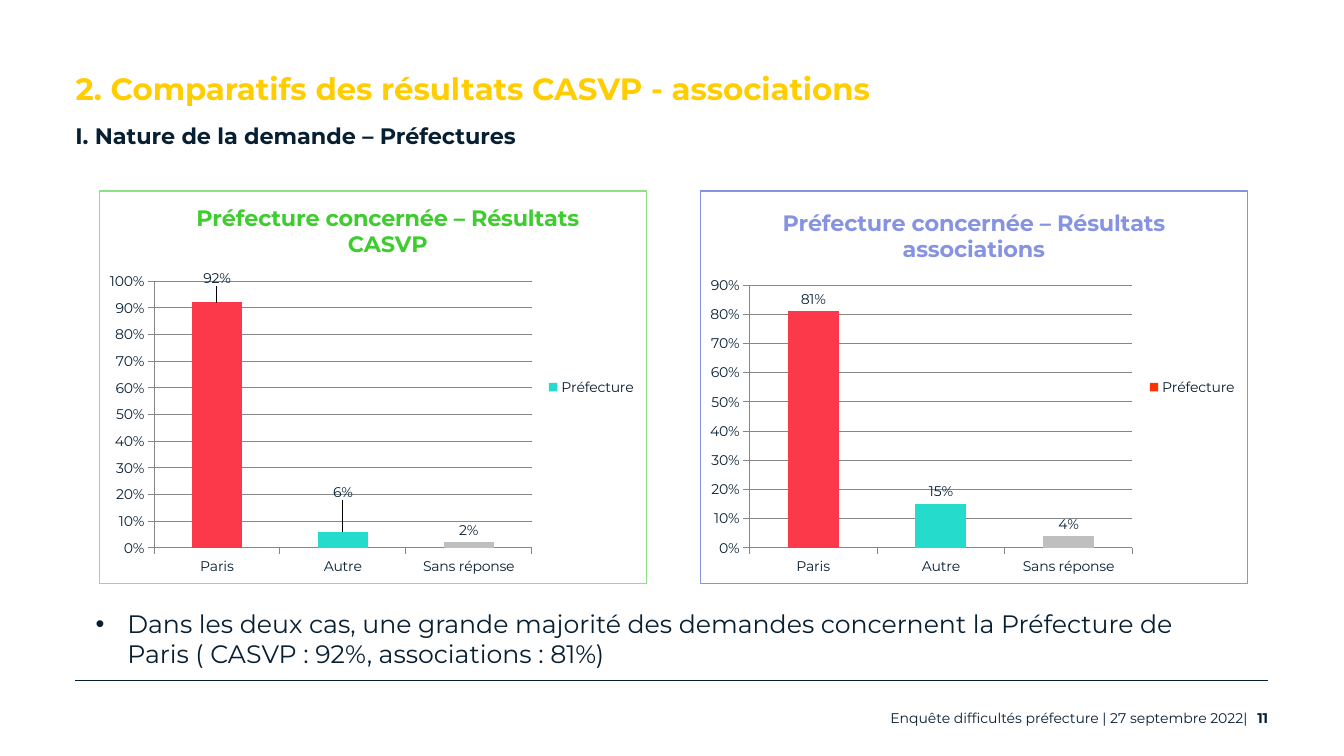
from dataclasses import dataclass

from lxml import etree
from pptx import Presentation
from pptx.chart.data import CategoryChartData
from pptx.dml.color import RGBColor
from pptx.enum.chart import XL_CHART_TYPE, XL_LABEL_POSITION, XL_LEGEND_POSITION, XL_TICK_MARK
from pptx.enum.shapes import MSO_CONNECTOR
from pptx.enum.text import MSO_ANCHOR, PP_ALIGN
from pptx.oxml import parse_xml
from pptx.oxml.ns import nsdecls, qn
from pptx.util import Cm, Pt

COLUMNS = XL_CHART_TYPE.COLUMN_CLUSTERED
OUTSIDE_END = XL_LABEL_POSITION.OUTSIDE_END
LEGEND_RIGHT = XL_LEGEND_POSITION.RIGHT
TICK_OUT = XL_TICK_MARK.OUTSIDE
STRAIGHT = MSO_CONNECTOR.STRAIGHT
TOP, MIDDLE, BOTTOM = MSO_ANCHOR.TOP, MSO_ANCHOR.MIDDLE, MSO_ANCHOR.BOTTOM
LEFT, RIGHT = PP_ALIGN.LEFT, PP_ALIGN.RIGHT

FONT = "Montserrat"
NAVY = "071F32"
GRID_GREY = "878787"
BAR_COLOURS = ("FB394A", "25DCCC", "BFBFBF")
CATEGORIES = ("Paris", "Autre", "Sans réponse")


@dataclass
class Label:
    """A text with its place in centimetres and its format."""

    text: str
    left: float
    top: float
    width: float
    height: float
    size: float
    bold: bool = False
    colour: str = NAVY
    anchor: MSO_ANCHOR = MIDDLE
    align: PP_ALIGN = LEFT
    spacing: float = 1.15
    bullet: bool = False


@dataclass
class Survey:
    """A column chart of one group of answers; layouts are chart fractions."""

    title: str
    left: float
    title_colour: str
    border: str
    legend_colour: str
    values: tuple[float, ...]
    plot_layout: dict[str, float]
    title_layout: dict[str, float]
    label_shifts: dict[int, float]
    overlap: int


TITLE = Label("2. Comparatifs des résultats CASVP - associations", 1.65, 1.5, 30, 1.3, 22,
              bold=True, colour="FFCD00", anchor=TOP)
LABELS = (
    Label("I. Nature de la demande – Préfectures", 1.65, 2.84, 30, 1.04, 16,
          bold=True, anchor=BOTTOM, spacing=1.3),
    Label("Enquête difficultés préfecture | 27 septembre 2022|", 14.68, 17.7, 17, 0.71, 10,
          align=RIGHT),
    Label("11", 30.71, 17.7, 1.5, 0.71, 10, bold=True, align=RIGHT),
    Label("Dans les deux cas, une grande majorité des demandes concernent la Préfecture "
          "de Paris ( CASVP : 92%, associations : 81%)", 2.16, 15.21, 29.29, 1.8, 18,
          anchor=TOP, spacing=1, bullet=True),
)
SURVEYS = (
    Survey("Préfecture concernée – Résultats CASVP", 2.49, "3ECD2E", "8AE380", "25DCCC",
           (0.92, 0.06, 0.02), {"x": 0.1, "y": 0.23, "w": 0.69, "h": 0.68},
           {"x": 0.17, "y": 0.02}, {0: -0.03, 1: -0.07}, 0),
    Survey("Préfecture concernée – Résultats associations", 17.63, "8693E2", "8693E2", "FF3300",
           (0.81, 0.15, 0.04), {"x": 0.09, "y": 0.24, "w": 0.7, "h": 0.67}, {}, {}, -79),
)


def rgb(colour: str) -> RGBColor:
    """Turn a hex string into a colour."""
    return RGBColor.from_string(colour)


def style_font(font, size: float, colour: str, bold: bool = False) -> None:
    """Give a font its face, size, colour and weight."""
    font.name = FONT
    font.size = Pt(size)
    font.bold = bold
    font.color.rgb = rgb(colour)


def write_label(box, label: Label) -> None:
    """Place a text shape and fill it with its formatted text."""
    box.left, box.top = Cm(label.left), Cm(label.top)
    box.width, box.height = Cm(label.width), Cm(label.height)
    frame = box.text_frame
    frame.word_wrap = True
    frame.vertical_anchor = label.anchor
    frame.text = label.text
    para = frame.paragraphs[0]
    para.alignment = label.align
    para.line_spacing = label.spacing
    if label.bullet:
        properties = para._p.get_or_add_pPr()
        properties.set("marL", str(Cm(0.8)))
        properties.set("indent", str(Cm(-0.8)))
        etree.SubElement(properties, qn("a:buFont")).set("typeface", "Arial")
        etree.SubElement(properties, qn("a:buChar")).set("char", "•")
    for span in para.runs:
        style_font(span.font, label.size, label.colour, label.bold)


def make_layout(places: dict[str, float], target: str = "", mode: str = "edge"):
    """Build a manual layout element for a chart part."""
    layout = parse_xml(f"<c:layout {nsdecls('c')}><c:manualLayout/></c:layout>")
    manual = layout[0]
    if target:
        etree.SubElement(manual, qn("c:layoutTarget")).set("val", target)
    for axis in ("x", "y"):
        etree.SubElement(manual, qn(f"c:{axis}Mode")).set("val", mode)
    for name, value in places.items():
        etree.SubElement(manual, qn(f"c:{name}")).set("val", str(value))
    return layout


def replace_layout(parent, previous, layout) -> None:
    """Put a layout in a chart part, after the given child or first."""
    for old in parent.findall(qn("c:layout")):
        parent.remove(old)
    if previous is None:
        parent.insert(0, layout)
    else:
        previous.addnext(layout)


def style_axes(chart) -> None:
    """Format both axes and the horizontal grid."""
    for axis in (chart.category_axis, chart.value_axis):
        axis.major_tick_mark = TICK_OUT
        axis.format.line.color.rgb = rgb(GRID_GREY)
        axis.format.line.width = Pt(0.75)
    values = chart.value_axis
    values.minimum_scale = 0
    values.major_unit = 0.1
    values.tick_labels.number_format = "0%"
    values.tick_labels.number_format_is_linked = False
    values.has_major_gridlines = True
    values.major_gridlines.format.line.color.rgb = rgb(GRID_GREY)
    values.major_gridlines.format.line.width = Pt(0.75)


def style_bars(plot, survey: Survey) -> None:
    """Colour the bars and label them."""
    plot.gap_width = 150
    plot.overlap = survey.overlap
    plot.vary_by_categories = False
    series = plot.series[0]
    series.format.fill.solid()
    series.format.fill.fore_color.rgb = rgb(survey.legend_colour)
    for index, colour in enumerate(BAR_COLOURS):
        fill = series.points[index].format.fill
        fill.solid()
        fill.fore_color.rgb = rgb(colour)
    labels = series.data_labels
    labels.show_value = True
    labels.number_format = "0%"
    labels.number_format_is_linked = False
    labels.position = OUTSIDE_END
    for index, shift in survey.label_shifts.items():
        series.points[index].data_label.position = OUTSIDE_END
        element = labels._element.findall(qn("c:dLbl"))[-1]
        replace_layout(element, element.find(qn("c:idx")),
                       make_layout({"x": 0, "y": shift}, mode="factor"))


def add_survey(page, survey: Survey) -> None:
    """Draw one survey chart with its title, legend and border."""
    data = CategoryChartData(number_format="0%")
    data.categories = CATEGORIES
    data.add_series("Préfecture", survey.values)
    chart = page.shapes.add_chart(COLUMNS, Cm(survey.left), Cm(4.8), Cm(13.82), Cm(9.91), data).chart
    style_font(chart.font, 10, NAVY)
    chart.has_title = True
    frame = chart.chart_title.text_frame
    frame.text = survey.title
    style_font(frame.paragraphs[0].runs[0].font, 16, survey.title_colour, True)
    chart.chart_title.include_in_layout = False
    if survey.title_layout:
        heading = chart.chart_title._element
        replace_layout(heading, heading.find(qn("c:tx")), make_layout(survey.title_layout))
    chart.has_legend = True
    chart.legend.position = LEGEND_RIGHT
    chart.legend.include_in_layout = False
    style_axes(chart)
    style_bars(chart.plots[0], survey)
    body = chart._chartSpace.find(qn("c:chart"))
    replace_layout(body.find(qn("c:plotArea")), None, make_layout(survey.plot_layout, "inner"))
    body.addnext(parse_xml(
        f'<c:spPr {nsdecls("c", "a")}><a:noFill/><a:ln w="{Pt(0.75)}"><a:solidFill>'
        f'<a:srgbClr val="{survey.border}"/></a:solidFill></a:ln></c:spPr>'))


def main() -> None:
    """Build the slide and save it."""
    deck = Presentation()
    deck.slide_width, deck.slide_height = Cm(33.87), Cm(19.05)
    page = deck.slides.add_slide(deck.slide_layouts[5])
    rule = page.shapes.add_connector(STRAIGHT, Cm(1.9), Cm(17.15), Cm(31.95), Cm(17.15))
    rule.line.color.rgb = rgb(NAVY)
    rule.line.width = Pt(0.65)
    etree.SubElement(rule._element.spPr, qn("a:effectLst"))
    write_label(page.shapes.title, TITLE)
    for survey in SURVEYS:
        add_survey(page, survey)
    for label in LABELS:
        write_label(page.shapes.add_textbox(0, 0, 0, 0), label)
    deck.save("out.pptx")


if __name__ == "__main__":
    main()
